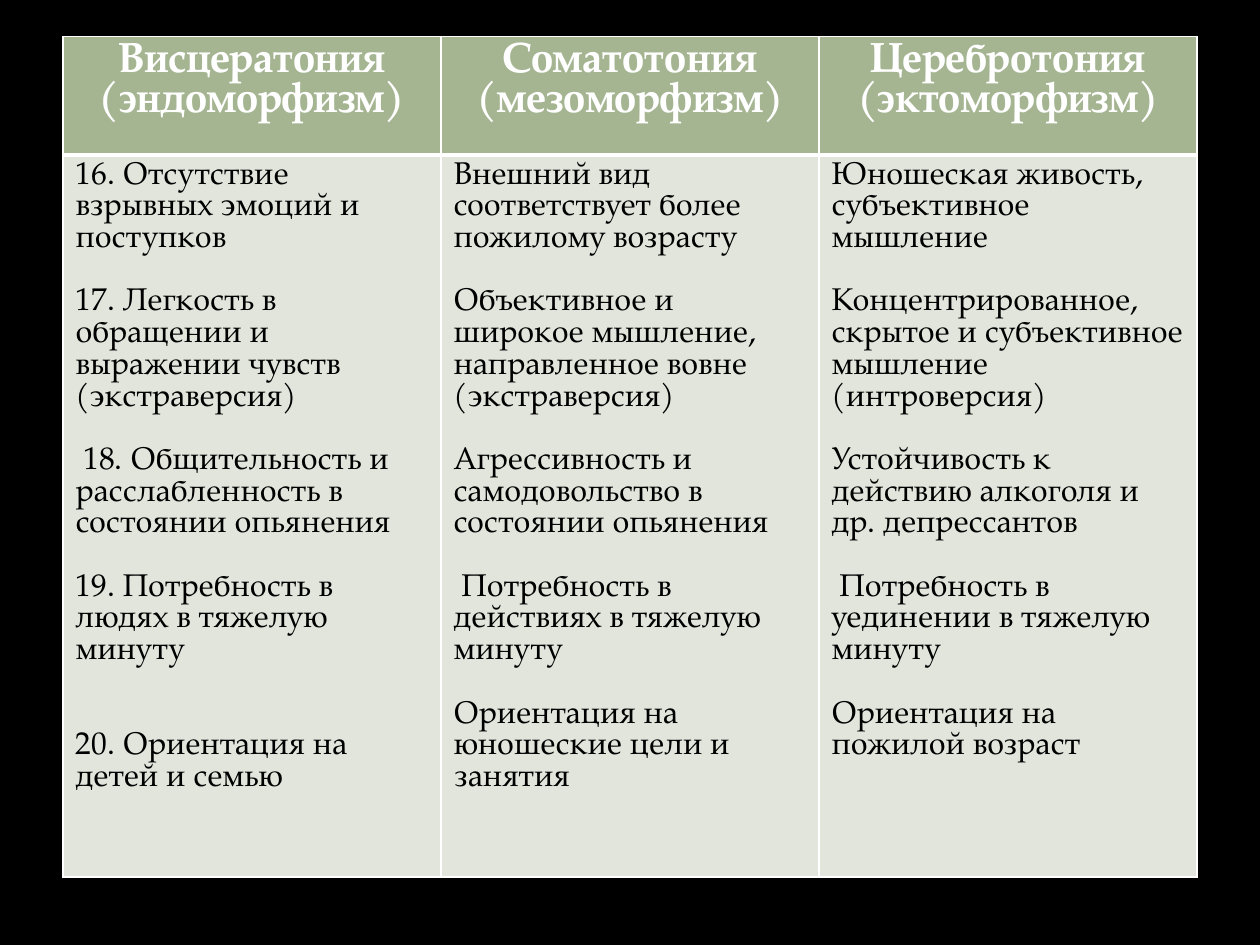
from lxml.etree import SubElement
from pptx import Presentation
from pptx.dml.color import RGBColor
from pptx.enum.text import PP_ALIGN
from pptx.oxml.ns import qn
from pptx.util import Inches, Pt

FONT = "TeX Gyre Pagella"
COLUMNS = [
    ("Висцератония (эндоморфизм)", [
        "16. Отсутствие взрывных эмоций и поступков",
        "17. Легкость в обращении и выражении чувств (экстраверсия)",
        " 18. Общительность и расслабленность в состоянии опьянения",
        "19. Потребность в людях в тяжелую минуту",
        "20. Ориентация на детей и семью"]),
    ("Соматотония (мезоморфизм)", [
        "Внешний вид соответствует более пожилому возрасту",
        "Объективное и широкое мышление, направленное вовне (экстраверсия)",
        "Агрессивность и самодовольство в состоянии опьянения",
        " Потребность в действиях в тяжелую минуту",
        "Ориентация на юношеские цели и занятия"]),
    ("Церебротония (эктоморфизм)", [
        "Юношеская живость, субъективное мышление",
        "Концентрированное, скрытое и субъективное мышление (интроверсия)",
        "Устойчивость к действию алкоголя и др. депрессантов",
        " Потребность в уединении в тяжелую минуту",
        "Ориентация на пожилой возраст"]),
]
ROW_HEIGHTS = [0.94, 5.73]
COLUMN_WIDTH = 3
HEADER = dict(size=24, pitch=23, color="FFFFFF", bold=True, align=PP_ALIGN.CENTER)
BODY = dict(size=18, pitch=18.1, color="000000", bold=False, align=PP_ALIGN.LEFT)


def rgb(value):
    return RGBColor.from_string(value)


def set_borders(cell, widths):
    properties = cell._tc.get_or_add_tcPr()
    for position, (side, width) in enumerate(zip("LRTB", widths)):
        line = properties.makeelement(qn(f"a:ln{side}"), {"w": str(Pt(width))})
        fill = SubElement(line, qn("a:solidFill"))
        SubElement(fill, qn("a:srgbClr"), val="FFFFFF")
        properties.insert(position, line)


def fill_cell(cell, texts, fill, borders, style):
    cell.fill.solid()
    cell.fill.fore_color.rgb = rgb(fill)
    set_borders(cell, borders)
    cell.text_frame.text = "\n".join(texts)
    for index, paragraph in enumerate(cell.text_frame.paragraphs):
        paragraph.alignment = style["align"]
        paragraph.line_spacing = Pt(style["pitch"])
        paragraph.space_before = Pt(style["pitch"] if index else 0)
        font = paragraph.runs[0].font
        font.name = FONT
        font.size = Pt(style["size"])
        font.bold = style["bold"]
        font.color.rgb = rgb(style["color"])


presentation = Presentation()
presentation.slide_width, presentation.slide_height = Inches(10), Inches(7.5)
slide = presentation.slides.add_slide(presentation.slide_layouts[6])
slide.background.fill.solid()
slide.background.fill.fore_color.rgb = rgb("000000")

table = slide.shapes.add_table(
    len(ROW_HEIGHTS), len(COLUMNS), Inches(0.5), Inches(0.29),
    Inches(COLUMN_WIDTH * len(COLUMNS)), Inches(sum(ROW_HEIGHTS))).table
for row, height in zip(table.rows, ROW_HEIGHTS):
    row.height = Inches(height)

for index, (heading, traits) in enumerate(COLUMNS):
    table.columns[index].width = Inches(COLUMN_WIDTH)
    fill_cell(table.cell(0, index), [heading], "A5B592", (1, 1, 1, 3), HEADER)
    fill_cell(table.cell(1, index), traits, "E1E5DC", (1, 1, 3, 1), BODY)

family_paragraph = table.cell(1, 0).text_frame.paragraphs[-1]
family_paragraph.space_before = Pt(2 * BODY["pitch"])

presentation.save("out.pptx")
